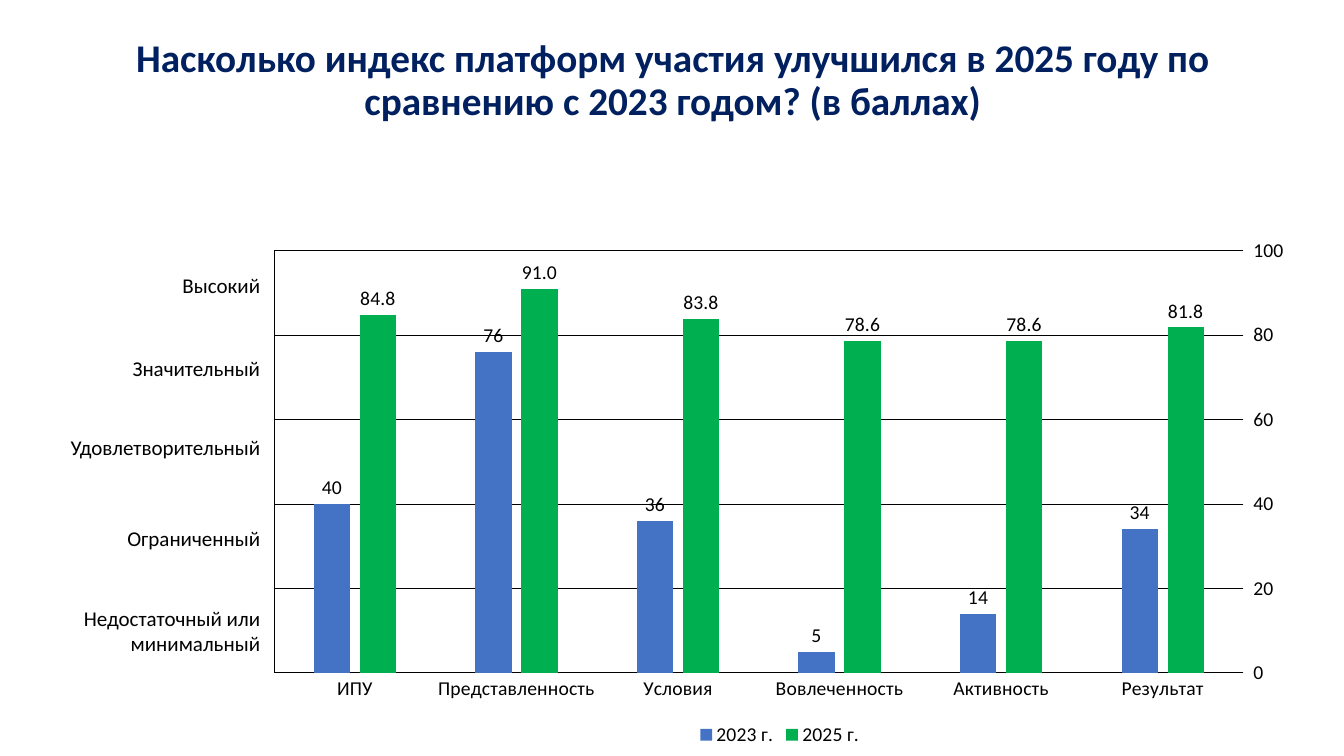
from lxml import etree
from pptx import Presentation
from pptx.chart.data import CategoryChartData
from pptx.dml.color import RGBColor
from pptx.enum import chart as ch, shapes, text
from pptx.oxml import ns
from pptx.util import Inches, Pt

NAVY = RGBColor(0x00, 0x20, 0x60)
BLACK = RGBColor(0, 0, 0)
WHITE = RGBColor(0xFF, 0xFF, 0xFF)
BLUE = RGBColor(0x44, 0x72, 0xC4)
GREEN = RGBColor(0x00, 0xB0, 0x50)


def set_font(font, size, color=BLACK):
    font.name = "Calibri"
    font.size = Pt(size)
    font.color.rgb = color


def set_line(line, width):
    line.color.rgb = BLACK
    line.width = Pt(width)


prs = Presentation()
prs.slide_width, prs.slide_height = Inches(13.33), Inches(7.5)
slide = prs.slides.add_slide(prs.slide_layouts[6])

title = slide.shapes.add_textbox(Inches(0.92), Inches(0.08), Inches(11.5), Inches(1.45)).text_frame
title.word_wrap = True
title.vertical_anchor = text.MSO_ANCHOR.MIDDLE
heading = title.paragraphs[0]
heading.text = "Насколько индекс платформ участия улучшился в 2025 году по сравнению с 2023 годом? (в баллах)"
heading.alignment = text.PP_ALIGN.CENTER
heading.line_spacing = 0.9
set_font(heading.font, 28, NAVY)
heading.font.bold = True

levels = [
    ("Недостаточный или минимальный", 5.82, 0.87),
    ("Ограниченный", 4.9, 0.87),
    ("Удовлетворительный", 4.01, 0.85),
    ("Значительный", 3.23, 0.85),
    ("Высокий", 2.4, 0.85),
]
for name, top, height in levels:
    level = slide.shapes.add_shape(
        shapes.MSO_SHAPE.RECTANGLE, Inches(0.37), Inches(top), Inches(2.31), Inches(height))
    level.shadow.inherit = False
    level.fill.solid()
    level.fill.fore_color.rgb = WHITE
    level.line.fill.background()
    level.text_frame.word_wrap = True
    level.text_frame.vertical_anchor = text.MSO_ANCHOR.MIDDLE
    label = level.text_frame.paragraphs[0]
    label.text = name
    label.alignment = text.PP_ALIGN.RIGHT
    set_font(label.font, 15)

scores = CategoryChartData()
scores.categories = ["ИПУ", "Представленность", "Условия", "Вовлеченность", "Активность", "Результат"]
scores.add_series("2023 г.", [40, 76, 36, 5, 14, 34])
scores.add_series("2025 г.", [84.8, 91, 83.8, 78.6, 78.6, 81.8])
chart = slide.shapes.add_chart(
    ch.XL_CHART_TYPE.COLUMN_CLUSTERED,
    Inches(2.51), Inches(2.28), Inches(10.45), Inches(5.17), scores).chart
chart.has_title = False
set_font(chart.font, 14)
chart.has_legend = True
chart.legend.position = ch.XL_LEGEND_POSITION.BOTTOM
chart.legend.include_in_layout = False
set_font(chart.legend.font, 14)

index_axis, score_axis = chart.category_axis, chart.value_axis
for axis, width in [(index_axis, 0.25), (score_axis, 0.75)]:
    axis.major_tick_mark = axis.minor_tick_mark = ch.XL_TICK_MARK.NONE
    set_font(axis.tick_labels.font, 14)
    set_line(axis.format.line, width)
score_axis.minimum_scale, score_axis.maximum_scale = 0, 100
score_axis.major_unit = 20
score_axis.tick_label_position = ch.XL_TICK_LABEL_POSITION.HIGH
score_axis.has_major_gridlines = True
set_line(score_axis.major_gridlines.format.line, 0.25)

columns = chart.plots[0]
columns.vary_by_categories = False
columns.gap_width, columns.overlap = 219, -27
for year, color, number_format in zip(columns.series, [BLUE, GREEN], ["0", "0.0"]):
    year.format.fill.solid()
    year.format.fill.fore_color.rgb = color
    labels = year.data_labels
    labels.show_value = True
    labels.position = ch.XL_LABEL_POSITION.OUTSIDE_END
    labels.number_format = number_format
    labels.number_format_is_linked = False
    set_font(labels.font, 14)

plot_area = chart.element.find(".//" + ns.qn("c:plotArea"))
layout = plot_area.find(ns.qn("c:layout"))
if layout is None:
    layout = etree.Element(ns.qn("c:layout"))
    plot_area.insert(0, layout)
manual = etree.SubElement(layout, ns.qn("c:manualLayout"))
for tag, value in [("layoutTarget", "inner"), ("xMode", "edge"), ("yMode", "edge"),
                   ("x", "0.02"), ("y", "0.04"), ("w", "0.92"), ("h", "0.81")]:
    etree.SubElement(manual, ns.qn("c:" + tag)).set("val", value)

prs.save("out.pptx")
